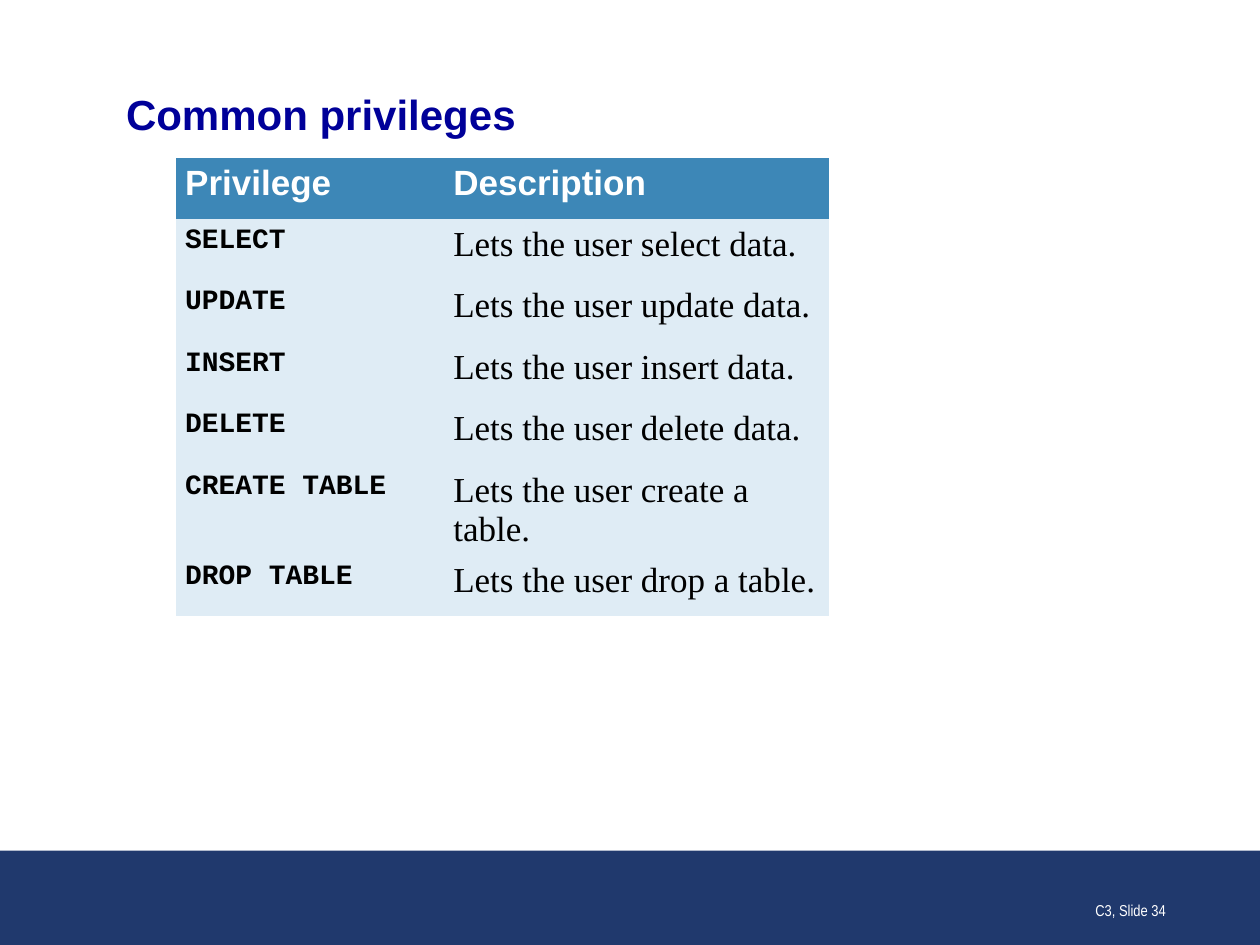
from dataclasses import dataclass

from pptx import Presentation
from pptx.dml.color import RGBColor
from pptx.enum.shapes import MSO_SHAPE
from pptx.enum.text import MSO_ANCHOR, PP_ALIGN
from pptx.oxml.ns import qn
from pptx.util import Inches, Pt

RECT = MSO_SHAPE.RECTANGLE
MIDDLE, BOTTOM = MSO_ANCHOR.MIDDLE, MSO_ANCHOR.BOTTOM
LEFT, RIGHT = PP_ALIGN.LEFT, PP_ALIGN.RIGHT
PLAIN_TABLE = "{2D5ABB26-0587-4C30-8999-92F81FD0307C}"


@dataclass(frozen=True)
class Font:
    name: str
    size: int
    color: str
    bold: bool = False


@dataclass(frozen=True)
class Theme:
    band: str = "20396D"
    header_fill: str = "3D87B7"
    body_fill: str = "DFECF5"
    title: Font = Font("Arial", 24, "000099", True)
    header: Font = Font("Arial", 20, "FFFFFF", True)
    code: Font = Font("Courier New", 16, "000000", True)
    body: Font = Font("Times New Roman", 20, "000000")
    footer: Font = Font("Arial Narrow", 9, "FFFFFF")


class Deck:
    def __init__(self, theme):
        self.theme = theme
        self.prs = Presentation()
        self.prs.slide_width, self.prs.slide_height = Inches(10), Inches(7.5)
        self.slide = self.prs.slides.add_slide(self.prs.slide_layouts[5])

    def box(self, x, y, w, h):
        sw, sh = self.prs.slide_width, self.prs.slide_height
        return int(x * sw), int(y * sh), int(w * sw), int(h * sh)

    def set_text(self, tf, text, font, align=LEFT):
        p = tf.paragraphs[0]
        p.text = text
        p.alignment = align
        p.font.name, p.font.size, p.font.bold = font.name, Pt(font.size), font.bold
        p.font.color.rgb = RGBColor.from_string(font.color)
        return p

    def band(self, x, y, w, h):
        sp = self.slide.shapes.add_shape(RECT, *self.box(x, y, w, h))
        sp.shadow.inherit = False
        sp.fill.solid()
        sp.fill.fore_color.rgb = RGBColor.from_string(self.theme.band)
        sp.line.fill.background()

    def title(self, text, x, y, w, h):
        sp = self.slide.shapes.title
        sp.left, sp.top, sp.width, sp.height = self.box(x, y, w, h)
        tf = sp.text_frame
        tf.margin_left = tf.margin_right = tf.margin_top = tf.margin_bottom = 0
        tf.vertical_anchor = MIDDLE
        self.set_text(tf, text, self.theme.title)

    def table(self, rows, shares, x, y, w, h):
        frame = self.slide.shapes.add_table(
            len(rows), len(shares), *self.box(x, y, w, h))
        table = frame.table
        table.horz_banding = False
        frame._element.find(".//" + qn("a:tableStyleId")).text = PLAIN_TABLE
        for column, share in zip(table.columns, shares):
            column.width = int(frame.width * share)
        for i, row in enumerate(rows):
            fonts = (self.theme.code, self.theme.body) if i else (self.theme.header,) * 2
            fill = self.theme.body_fill if i else self.theme.header_fill
            for j, (text, font) in enumerate(zip(row, fonts)):
                cell = table.cell(i, j)
                cell.margin_left = cell.margin_right = Inches(0.07)
                cell.fill.solid()
                cell.fill.fore_color.rgb = RGBColor.from_string(fill)
                p = self.set_text(cell.text_frame, text, font)
                p.space_after = Pt(6)

    def footer(self, text, x, y, w, h):
        sp = self.slide.shapes.add_textbox(*self.box(x, y, w, h))
        tf = sp.text_frame
        tf.word_wrap = True
        tf.vertical_anchor = BOTTOM
        self.set_text(tf, text, self.theme.footer, RIGHT)


def main():
    privileges = [
        ("Privilege", "Description"),
        ("SELECT", "Lets the user select data."),
        ("UPDATE", "Lets the user update data."),
        ("INSERT", "Lets the user insert data."),
        ("DELETE", "Lets the user delete data."),
        ("CREATE TABLE", "Lets the user create a table."),
        ("DROP TABLE", "Lets the user drop a table."),
    ]
    deck = Deck(Theme())
    deck.band(0, 0.9, 1, 0.1)
    deck.title("Common privileges", 0.1, 0.09, 0.8, 0.06)
    deck.table(privileges, (0.38, 0.62), 0.14, 1 / 6, 0.56, 0.455)
    deck.footer("C3, Slide 34", 0.725, 0.91, 0.21, 0.07)
    deck.prs.save("out.pptx")


if __name__ == "__main__":
    main()
